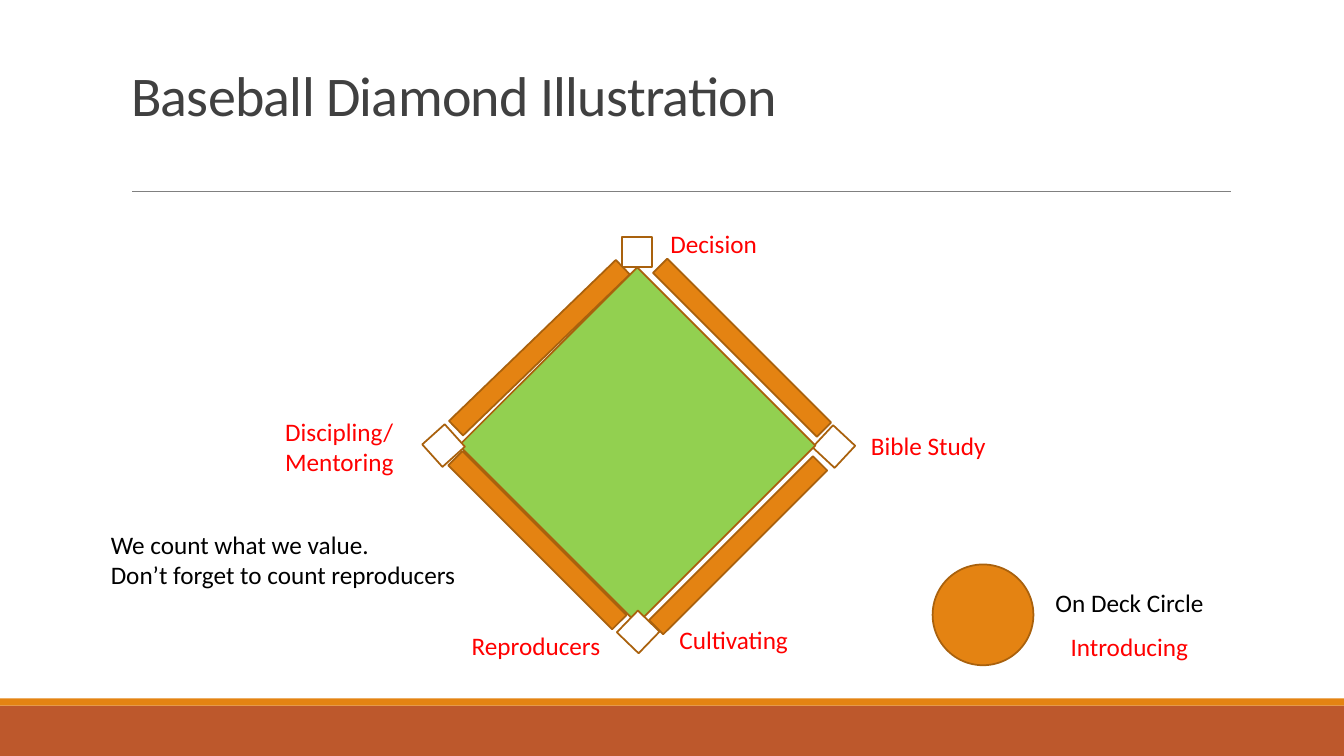
import pptx
import pptx.util
import pptx.dml.color
import pptx.enum.shapes
import pptx.enum.text
import lxml.etree

Inches = pptx.util.Inches
Pt = pptx.util.Pt
KIND = pptx.enum.shapes.MSO_SHAPE
TEXT = pptx.enum.text

ORANGE, RUST, GREEN, WHITE = "E48312", "BD582C", "92D050", "FFFFFF"
EDGE, RED, BLACK, DARK, GRAY = "A9610D", "FF0000", "000000", "404040", "808080"

PATHS = [
    (7.22, 4.26, 45),
    (7.26, 2.3, 315),
    (5.25, 2.3, 46),
    (5.23, 4.21, 315),
]
BASES = [
    (6.17, 2.35, 0),
    (4.25, 4.27, 318),
    (6.18, 6.12, 44),
]
LABELS = [
    (10.37, 5.78, 1.69, BLACK, ["On Deck Circle"]),
    (10.52, 6.21, 1.38, RED, ["Introducing"]),
    (6.64, 6.14, 1.29, RED, ["Cultivating"]),
    (8.54, 4.22, 1.35, RED, ["Bible Study"]),
    (6.55, 2.22, 1.07, RED, ["Decision"]),
    (2.73, 4.08, 1.29, RED, ["Discipling/", "Mentoring"]),
    (4.58, 6.2, 1.49, RED, ["Reproducers"]),
    (1, 5.2, 3.72, BLACK,
     ["We count what we value.", "Don’t forget to count reproducers"]),
]


def apply(item, values):
    for name, value in values.items():
        setattr(item, name, value)


def paint(part, color):
    part.rgb = pptx.dml.color.RGBColor.from_string(color)


def fill(shape, color):
    shape.fill.solid()
    paint(shape.fill.fore_color, color)


def style(run, size, color):
    apply(run.font, {"name": "Calibri", "size": Pt(size)})
    paint(run.font.color, color)


def add_shape(slide, box, color, turn=0, edge=EDGE, kind=KIND.RECTANGLE):
    shape = slide.shapes.add_shape(kind, *map(Inches, box))
    shape.rotation = turn
    shape.shadow.inherit = False
    fill(shape, color)
    if edge:
        paint(shape.line.color, edge)
        shape.line.width = Pt(1.25)
    else:
        shape.line.fill.background()


def add_rule(slide, left, right, top):
    ends = map(Inches, (left, top, right, top))
    rule = slide.shapes.add_connector(
        pptx.enum.shapes.MSO_CONNECTOR.STRAIGHT, *ends)
    paint(rule.line.color, GRAY)
    rule.line.width = Pt(0.5)
    props = rule._element.spPr
    lxml.etree.SubElement(props, pptx.oxml.ns.qn("a:effectLst"))


def add_label(slide, left, top, width, color, lines):
    height = 0.1 + 0.3 * len(lines)
    box = slide.shapes.add_textbox(*map(Inches, (left, top, width, height)))
    frame = box.text_frame
    apply(frame, {
        "word_wrap": False,
        "auto_size": TEXT.MSO_AUTO_SIZE.SHAPE_TO_FIT_TEXT,
    })
    frame.text = "\n".join(lines)
    for para in frame.paragraphs:
        style(para.runs[0], 18, color)


def set_title(slide, text):
    title = slide.shapes.title
    apply(title, {
        "left": Inches(1.2), "top": Inches(0.83),
        "width": Inches(11), "height": Inches(1.07),
    })
    frame = title.text_frame
    frame.text = text
    apply(frame, {
        "word_wrap": True,
        "auto_size": TEXT.MSO_AUTO_SIZE.NONE,
        "vertical_anchor": TEXT.MSO_ANCHOR.BOTTOM,
        "margin_bottom": Inches(0.63),
    })
    para = frame.paragraphs[0]
    apply(para, {"alignment": TEXT.PP_ALIGN.LEFT, "line_spacing": 0.85})
    run = para.runs[0]
    style(run, 40, DARK)
    run._r.get_or_add_rPr().set("spc", "-50")


def add_field(slide):
    add_shape(slide, (8.12, 4.28, 0.3, 0.3), WHITE, 43)
    add_shape(slide, (5.07, 3.17, 2.5, 2.5), GREEN, 45)
    for left, top, turn in PATHS[:2]:
        add_shape(slide, (left, top, 0.2, 2.3), ORANGE, turn)
    for left, top, turn in BASES[:2]:
        add_shape(slide, (left, top, 0.3, 0.3), WHITE, turn)
    for left, top, turn in PATHS[2:]:
        add_shape(slide, (left, top, 0.2, 2.3), ORANGE, turn)
    for left, top, turn in BASES[2:]:
        add_shape(slide, (left, top, 0.3, 0.3), WHITE, turn)
    add_shape(slide, (9.25, 5.6, 1, 1), ORANGE, kind=KIND.OVAL)


def main():
    deck = pptx.Presentation()
    apply(deck, {"slide_width": Inches(13.33), "slide_height": Inches(7.5)})
    slide = deck.slides.add_slide(deck.slide_layouts[5])
    fill(slide.background, WHITE)
    add_shape(slide, (0, 7, 13.33, 0.5), RUST, edge=None)
    add_shape(slide, (0, 6.93, 13.33, 0.07), ORANGE, edge=None)
    add_rule(slide, 1.31, 12.21, 1.9)
    set_title(slide, "Baseball Diamond Illustration")
    add_field(slide)
    for label in LABELS:
        add_label(slide, *label)
    deck.save("out.pptx")


if __name__ == "__main__":
    main()
